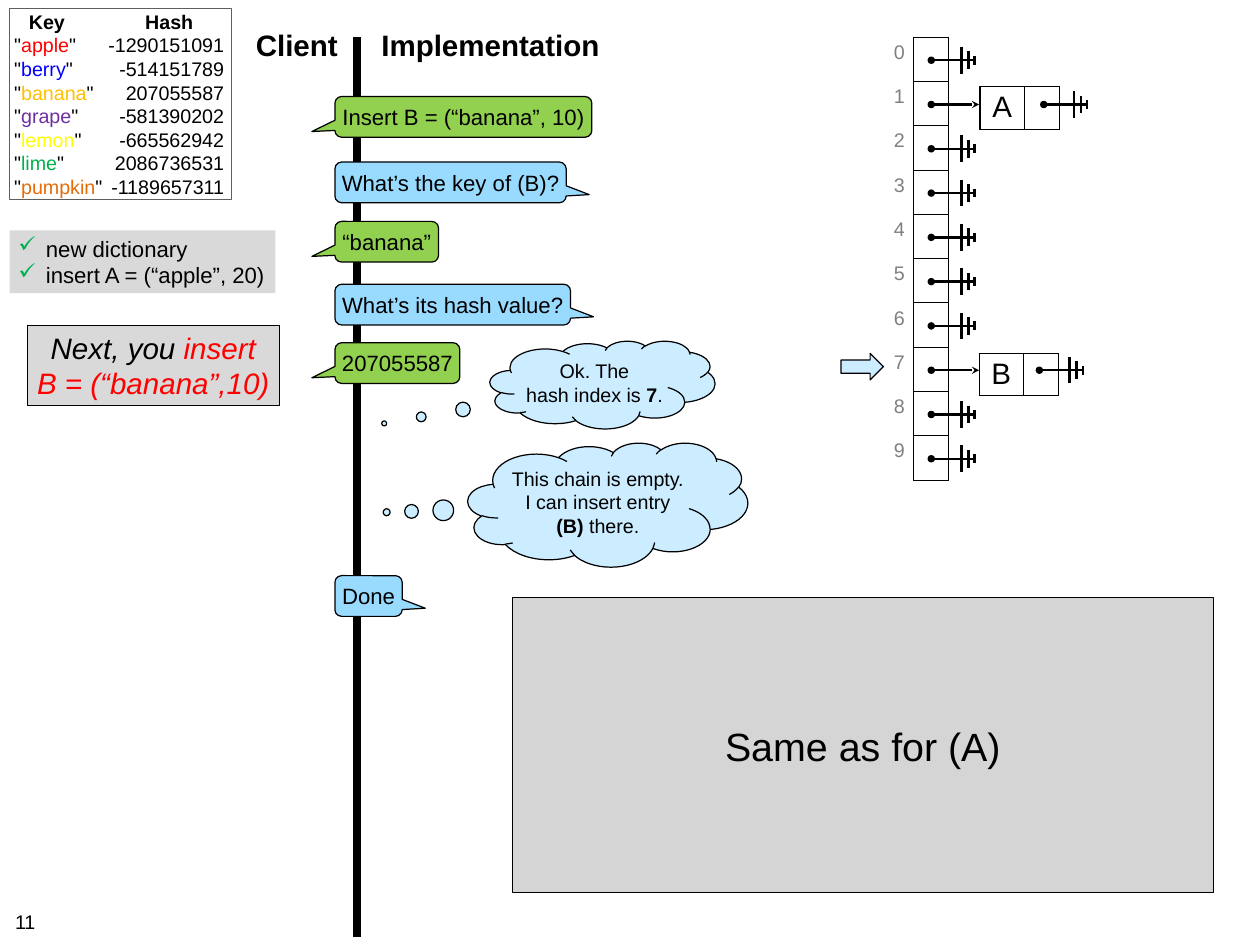
from lxml.etree import SubElement
from pptx import Presentation
from pptx.dml.color import RGBColor
from pptx.enum.shapes import MSO_CONNECTOR, MSO_SHAPE as SHAPE
from pptx.enum.text import MSO_ANCHOR as ANCHOR, PP_ALIGN as ALIGN
from pptx.oxml.ns import qn
from pptx.util import Inches, Pt

BLACK, GRAY, RED = "000000", "808080", "FF0000"
CLIENT_GREEN, REPLY_BLUE, CLOUD_BLUE = "92D050", "99DAFF", "CCECFF"
CHECK_GREEN, PANEL_GRAY = "00B050", "D9D9D9"
NO_TABLE_STYLE = "{2D5ABB26-0587-4C30-8999-92F81FD0307C}"
HASHES = [
    ("apple", RED, "-1290151091"),
    ("berry", "0000FF", "-514151789"),
    ("banana", "FFC000", "207055587"),
    ("grape", "7030A0", "-581390202"),
    ("lemon", "FFFF00", "-665562942"),
    ("lime", CHECK_GREEN, "2086736531"),
    ("pumpkin", "E46C0A", "-1189657311"),
]
DIALOGUE = [
    ("Insert B = (“banana”, 10)", 1.09, 2.9, True),
    ("What’s the key of (B)?", 1.83, 2.61, False),
    ("“banana”", 2.5, 1.17, True),
    ("What’s its hash value?", 3.21, 2.66, False),
    ("207055587", 3.87, 1.41, True),
    ("Done", 6.5, 0.76, False),
]
SLOT_TOP, SLOT_HEIGHT, SLOT_COUNT = 0.42, 0.5, 10
CHAINS = [("A", 1, 11.06, 0.98, 11.78), ("B", 7, 11.05, 3.99, 11.73)]


def rgb(color):
    """Turn a hex string into a colour."""
    return RGBColor.from_string(color)


def write(frame, lines, size=18, color=BLACK, bold=False, italic=False,
          align=ALIGN.CENTER, anchor=ANCHOR.MIDDLE, inset=(0.06, 0.06), wrap=False):
    """Fill a text frame; a line is a list of strings or (string, format) pairs."""
    frame.word_wrap = wrap
    frame.vertical_anchor = anchor
    frame.margin_left = frame.margin_right = Inches(inset[0])
    frame.margin_top = frame.margin_bottom = Inches(inset[1])
    for index, line in enumerate(lines):
        para = frame.add_paragraph() if index else frame.paragraphs[0]
        para.alignment = align
        for part in line:
            text, changes = (part, {}) if isinstance(part, str) else part
            span = para.add_run()
            span.text = text
            span.font.name = "Arial"
            span.font.size = Pt(size)
            span.font.bold = changes.get("bold", bold)
            span.font.italic = italic
            span.font.color.rgb = rgb(changes.get("color", color))


def add_box(page, kind, left, top, width, height, fill=None, line=BLACK, weight=1):
    """Add a preset shape with a plain fill and outline."""
    box = page.shapes.add_shape(kind, Inches(left), Inches(top), Inches(width), Inches(height))
    box.shadow.inherit = False
    if fill:
        box.fill.solid()
        box.fill.fore_color.rgb = rgb(fill)
    else:
        box.fill.background()
    if line:
        box.line.color.rgb = rgb(line)
        box.line.width = Pt(weight)
    else:
        box.line.fill.background()
    return box


def add_line(shapes, x1, y1, x2, y2, weight=2, head=None, tail=None):
    """Add a straight black line with optional ends."""
    line = shapes.add_connector(
        MSO_CONNECTOR.STRAIGHT, Inches(x1), Inches(y1), Inches(x2), Inches(y2))
    line.line.color.rgb = rgb(BLACK)
    line.line.width = Pt(weight)
    properties = line._element.spPr
    outline = properties.find(qn("a:ln"))
    for tag, end in (("a:headEnd", head), ("a:tailEnd", tail)):
        if end:
            SubElement(outline, qn(tag), type=end)
    SubElement(properties, qn("a:effectLst"))


def add_null_pointer(page, x, y):
    """Add a pointer that ends in a ground symbol."""
    shapes = page.shapes.add_group_shape().shapes
    add_line(shapes, x, y, x + 0.5, y, head="oval")
    for offset, reach in ((0.34, 0.15), (0.42, 0.1), (0.49, 0.05)):
        add_line(shapes, x + offset, y - reach, x + offset, y + reach)


def add_border(cell):
    """Draw thin black lines on all four sides of a cell."""
    properties = cell._tc.get_or_add_tcPr()
    for index, tag in enumerate(("a:lnL", "a:lnR", "a:lnT", "a:lnB")):
        edge = SubElement(properties, qn(tag), w=str(Pt(1)))
        SubElement(SubElement(edge, qn("a:solidFill")), qn("a:srgbClr"), val=BLACK)
        properties.insert(index, edge)


def add_cells(page, left, top, widths, height, rows):
    """Add an unstyled table and return it."""
    table = page.shapes.add_table(rows, len(widths), Inches(left), Inches(top),
                                  Inches(sum(widths)), Inches(height * rows)).table
    table.first_row = table.horz_banding = False
    table._tbl.tblPr.find(qn("a:tableStyleId")).text = NO_TABLE_STYLE
    for column, width in zip(table.columns, widths):
        column.width = Inches(width)
    for row in table.rows:
        row.height = Inches(height)
        for cell in row.cells:
            cell.fill.background()
    return table


def write_cell(cell, text, size, color, align):
    """Write one table cell."""
    write(cell.text_frame, [[text]], size=size, color=color, align=align,
          anchor=ANCHOR.TOP, inset=(0.1, 0.05), wrap=True)


def add_buckets(page):
    """Add the numbered array of buckets with its pointers."""
    table = add_cells(page, 9.98, SLOT_TOP, (0.33, 0.4), SLOT_HEIGHT, SLOT_COUNT)
    used = [slot for _, slot, *_ in CHAINS]
    for slot in range(SLOT_COUNT):
        write_cell(table.cell(slot, 0), str(slot), 16, GRAY, ALIGN.RIGHT)
        add_border(table.cell(slot, 1))
        y = SLOT_TOP + SLOT_HEIGHT * slot + 0.26
        if slot in used:
            add_line(page.shapes, 10.51, y, 11.05, y, head="oval", tail="stealth")
        else:
            add_null_pointer(page, 10.51, y)


def add_chain_node(page, name, slot, left, top, pointer):
    """Add a chain node with its closing null pointer."""
    table = add_cells(page, left, top, (0.5, 0.4), 0.48, 1)
    write_cell(table.cell(0, 0), name, 24, BLACK, ALIGN.CENTER)
    for cell in table.rows[0].cells:
        add_border(cell)
    add_null_pointer(page, pointer, SLOT_TOP + SLOT_HEIGHT * slot + 0.26)


def add_speech(page, text, top, width, from_client):
    """Add a speech bubble that points to the speaker's side."""
    bubble = add_box(page, SHAPE.ROUNDED_RECTANGULAR_CALLOUT, 3.78, top, width, 0.46,
                     CLIENT_GREEN if from_client else REPLY_BLUE)
    reach = 0.5 + 0.26 / width
    bubble.adjustments[0] = -reach if from_client else reach
    bubble.adjustments[1] = 0.36 if from_client else 0.3
    write(bubble.text_frame, [[text]])


def add_thought(page, left, top, width, height, tip, lines):
    """Add a thought cloud."""
    cloud = add_box(page, SHAPE.CLOUD_CALLOUT, left, top, width, height, CLOUD_BLUE)
    cloud.adjustments[0], cloud.adjustments[1] = tip
    write(cloud.text_frame, lines, size=16)


def add_heading(page, text, left, width):
    """Add a column heading."""
    box = page.shapes.add_textbox(Inches(left), Inches(0.25), Inches(width), Inches(0.5))
    write(box.text_frame, [[text]], size=24, bold=True, inset=(0.1, 0.05))


def set_tabs(para, stops):
    """Give a paragraph its tab stops."""
    tabs = SubElement(para._p.get_or_add_pPr(), qn("a:tabLst"))
    for position, kind in stops:
        SubElement(tabs, qn("a:tab"), pos=str(Inches(position)), algn=kind)


def add_hash_list(page):
    """Add the list of keys and hash values."""
    box = add_box(page, SHAPE.RECTANGLE, 0.11, 0.1, 2.5, 2.15, line="5E5E5E")
    lines = [[("\tKey\tHash", {"bold": True})]]
    lines += [['"', (key, {"color": color}), '"\t' + value] for key, color, value in HASHES]
    write(box.text_frame, lines, size=16, align=ALIGN.LEFT, inset=(0.05, 0), wrap=True)
    header, *entries = box.text_frame.paragraphs
    set_tabs(header, [(0.37, "ctr"), (1.75, "ctr")])
    for entry in entries:
        set_tabs(entry, [(2.37, "r")])


def add_checklist(page):
    """Add the steps done so far."""
    box = add_box(page, SHAPE.RECTANGLE, 0.11, 2.6, 3, 0.71, PANEL_GRAY, line=None)
    write(box.text_frame, [["new dictionary"], ["insert A = (“apple”, 20)"]],
          align=ALIGN.LEFT, inset=(0.1, 0.05))
    for para in box.text_frame.paragraphs:
        properties = para._p.get_or_add_pPr()
        properties.set("marL", str(Inches(0.31)))
        properties.set("indent", str(Inches(-0.31)))
        SubElement(SubElement(properties, qn("a:buClr")), qn("a:srgbClr"), val=CHECK_GREEN)
        SubElement(properties, qn("a:buChar"), char="✓")


def main():
    """Build the slide."""
    deck = Presentation()
    deck.slide_width, deck.slide_height = Inches(14.22), Inches(10.67)
    page = deck.slides.add_slide(deck.slide_layouts[6])
    same = add_box(page, SHAPE.RECTANGLE, 5.78, 6.75, 7.92, 3.33, "D6D5D5")
    write(same.text_frame, [["Same as for (A)"]], size=32)
    add_buckets(page)
    for chain in CHAINS:
        add_chain_node(page, *chain)
    add_heading(page, "Client", 2.78, 1.14)
    add_heading(page, "Implementation", 4.19, 2.69)
    add_line(page.shapes, 4.03, 0.42, 4.03, 10.58, weight=6)
    for speech in DIALOGUE:
        add_speech(page, *speech)
    add_thought(page, 5.53, 3.85, 2.54, 0.99, (-0.97, 0.44),
                [["Ok. The"], ["hash index is ", ("7", {"bold": True}), "."]])
    add_thought(page, 5.28, 5, 3.16, 1.4, (-0.79, 0.06),
                [["This chain is empty."], ["I can insert entry"],
                 [("(B)", {"bold": True}), " there."]])
    add_box(page, SHAPE.RIGHT_ARROW, 9.49, 3.99, 0.48, 0.3, CLOUD_BLUE)
    add_hash_list(page)
    add_checklist(page)
    step = add_box(page, SHAPE.RECTANGLE, 0.31, 3.67, 2.84, 0.91, PANEL_GRAY, weight=0.75)
    write(step.text_frame, [["Next, you ", ("insert", {"color": RED})],
                            [("B = (“banana”,10)", {"color": RED})]], size=24, italic=True)
    number = page.shapes.add_textbox(Inches(0.11), Inches(10.23), Inches(0.37), Inches(0.35))
    write(number.text_frame, [["11"]], size=16, align=ALIGN.LEFT)
    deck.save("out.pptx")


if __name__ == "__main__":
    main()
